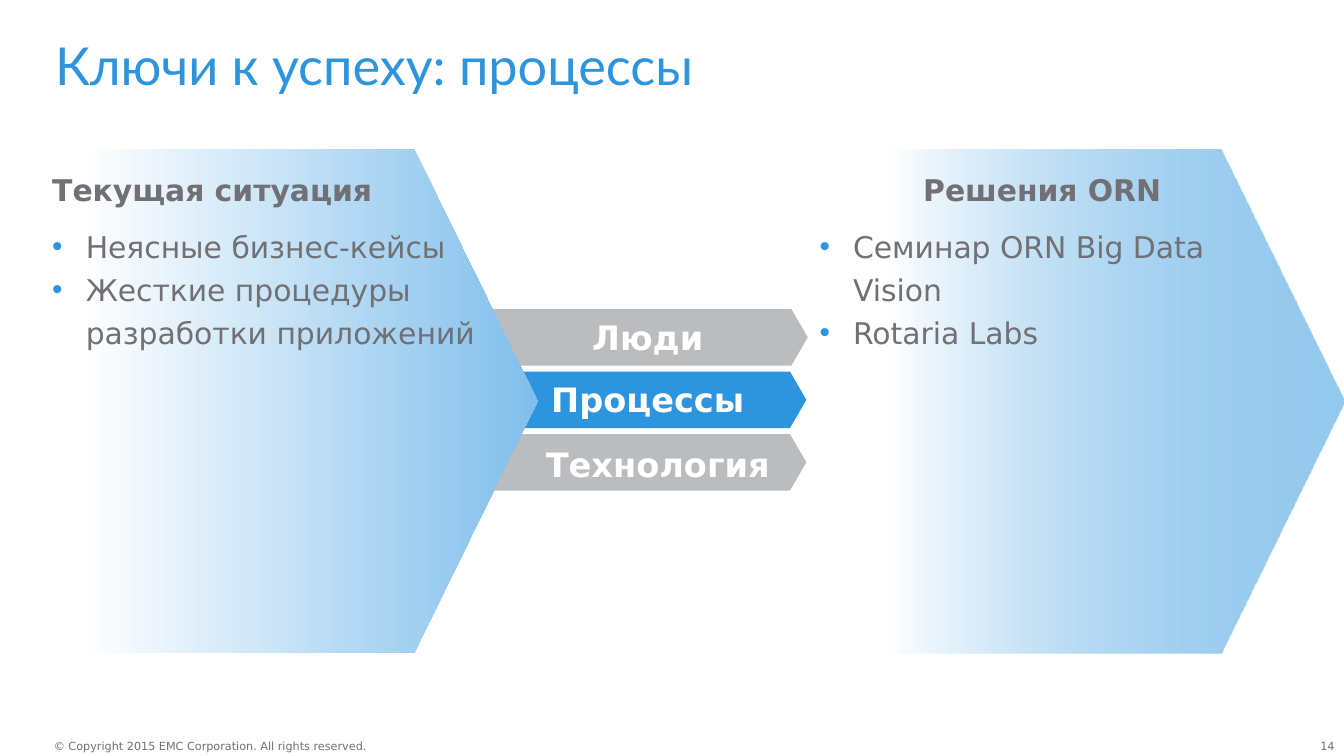
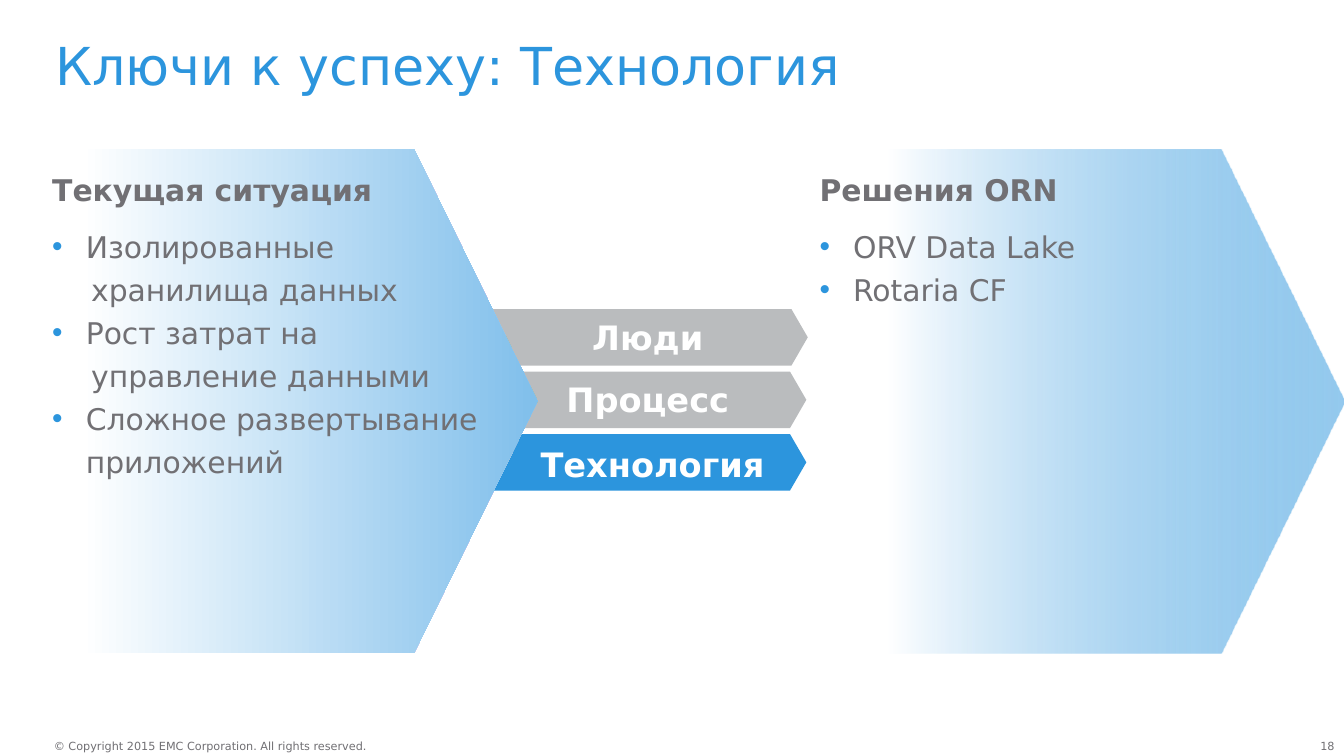
from dataclasses import dataclass

from lxml.etree import SubElement
from pptx import Presentation
from pptx.dml.color import RGBColor
from pptx.enum.shapes import MSO_SHAPE
from pptx.enum.text import MSO_ANCHOR, MSO_AUTO_SIZE, PP_ALIGN
from pptx.oxml.ns import qn
from pptx.util import Inches, Pt


@dataclass(frozen=True)
class Theme:
    blue: str = "2C95DD"
    light_blue: str = "80BFEB"
    gray: str = "BABCBE"
    text: str = "717074"
    white: str = "FFFFFF"
    font: str = "DejaVu Sans"
    title_font: str = "Lato"
    title_size: int = 28
    step_size: int = 18
    body_size: int = 16
    footer_size: int = 6


THEME = Theme()
SLIDE_WIDTH = Inches(10)
SLIDE_HEIGHT = SLIDE_WIDTH * 9 // 16
COPYRIGHT = "© Copyright 2015 EMC Corporation. All rights reserved."
LEFT_HEADING = "Текущая ситуация"
RIGHT_HEADING = "Решения ORN"
STEP_ARROWS = [(3.62, 2.39), (3.63, 2.37), (3.63, 2.37)]
FIRST_STEP_TOP, LAST_STEP_TOP, STEP_HEIGHT = 2.3, 3.23, 0.42
STEP_PITCH = (LAST_STEP_TOP - FIRST_STEP_TOP) / (len(STEP_ARROWS) - 1)
BULLET_INDENT = 0.25
CONTINUED_INDENT = 0.29


@dataclass(frozen=True)
class Line:
    text: str
    bullet: bool = True


@dataclass(frozen=True)
class Content:
    title: str
    number: str
    steps: list  # (text, left, top, width) of each label
    active_step: int
    current: list
    solutions: list
    title_font: str = THEME.font
    solutions_align: PP_ALIGN = PP_ALIGN.LEFT


SLIDES = [
    Content(
        title="Ключи к успеху: процессы",
        number="14",
        steps=[("Люди", 3.92, 2.31, 1.8), ("Процессы", 3.88, 2.77, 1.88),
               ("Технология", 3.88, 3.25, 2.03)],
        active_step=1,
        current=[Line("Неясные бизнес-кейсы"),
                 Line("Жесткие процедуры разработки приложений")],
        solutions=[Line("Семинар ORN Big Data Vision"), Line("Rotaria Labs")],
        title_font=THEME.title_font,
        solutions_align=PP_ALIGN.CENTER,
    ),
    Content(
        title="Ключи к успеху: Технология",
        number="18",
        steps=[("Люди", 3.92, 2.31, 1.8), ("Процесс", 3.88, 2.77, 1.88),
               ("Технология", 3.88, 3.25, 1.95)],
        active_step=2,
        current=[Line("Изолированные"),
                 Line("хранилища данных", bullet=False),
                 Line("Рост затрат на"),
                 Line("управление данными", bullet=False),
                 Line("Сложное развертывание приложений")],
        solutions=[Line("ORV Data Lake"), Line("Rotaria CF")],
    ),
]


def color(value):
    return RGBColor.from_string(value)


def place(shape, left, top, width, height):
    shape.left, shape.top = Inches(left), Inches(top)
    shape.width, shape.height = Inches(width), Inches(height)


def remove_insets(frame):
    frame.margin_left = frame.margin_right = 0
    frame.margin_top = frame.margin_bottom = 0


def add_run(paragraph, text, size, text_color=THEME.text, bold=False, font=THEME.font):
    run = paragraph.add_run()
    run.text = text
    run.font.name = font
    run.font.size = Pt(size)
    run.font.bold = bold
    run.font.color.rgb = color(text_color)


def add_frame(slide, *box):
    """Add a wrapping text box and return its text frame."""
    frame = slide.shapes.add_textbox(*map(Inches, box)).text_frame
    frame.word_wrap = True
    return frame


def add_label(slide, box, text, size, align=PP_ALIGN.LEFT, **style):
    frame = add_frame(slide, *box)
    paragraph = frame.paragraphs[0]
    paragraph.alignment = align
    add_run(paragraph, text, size, **style)
    return frame


def add_title(slide, text, font):
    title = slide.shapes.title
    place(title, 0.41, 0.25, 9.25, 0.5)
    frame = title.text_frame
    remove_insets(frame)
    frame.auto_size = MSO_AUTO_SIZE.NONE
    frame.vertical_anchor = MSO_ANCHOR.TOP
    paragraph = frame.paragraphs[0]
    paragraph.alignment = PP_ALIGN.LEFT
    add_run(paragraph, text, THEME.title_size, THEME.blue, font=font)


def add_footer(slide, number):
    page = add_label(slide, (9.62, 5.5, 0.31, 0.1), number,
                     THEME.footer_size, PP_ALIGN.RIGHT)
    notice = add_label(slide, (0.4, 5.5, 2.42, 0.1), COPYRIGHT, THEME.footer_size)
    notice.word_wrap = False
    for frame in (page, notice):
        remove_insets(frame)


def add_pentagon(slide, box, point):
    """Add a right-pointing pentagon; point is the tip length over its height."""
    shape = slide.shapes.add_shape(MSO_SHAPE.PENTAGON, *map(Inches, box))
    shape.adjustments[0] = point
    shape.shadow.inherit = False
    shape.line.fill.background()
    return shape


def add_panel(slide, left, end_color, opacity=None):
    """Add a large pentagon fading from white to end_color."""
    panel = add_pentagon(slide, (left, 1.11, 4, 3.75), 0.245)
    panel.fill.gradient()
    panel.fill.gradient_angle = 0
    start, end = panel.fill.gradient_stops
    start.position, start.color.rgb = 0.15, color(THEME.white)
    end.position, end.color.rgb = 1, color(end_color)
    if opacity is not None:
        last_color = list(panel.element.iter(qn("a:srgbClr")))[-1]
        SubElement(last_color, qn("a:alpha"), val=str(opacity * 1000))


def add_step_arrows(slide, active_step):
    for index, (left, width) in enumerate(STEP_ARROWS):
        top = FIRST_STEP_TOP + index * STEP_PITCH
        arrow = add_pentagon(slide, (left, top, width, STEP_HEIGHT), 0.289)
        arrow.fill.solid()
        arrow.fill.fore_color.rgb = color(
            THEME.blue if index == active_step else THEME.gray)


def add_step_labels(slide, steps):
    for text, left, top, width in steps:
        frame = add_label(slide, (left, top, width, 0.4), text, THEME.step_size,
                          PP_ALIGN.CENTER, text_color=THEME.white, bold=True)
        frame.vertical_anchor = MSO_ANCHOR.MIDDLE


def set_indent(paragraph, bullet):
    properties = paragraph._p.get_or_add_pPr()
    indent = BULLET_INDENT if bullet else CONTINUED_INDENT
    properties.set("marL", str(Inches(indent)))
    properties.set("indent", str(-Inches(indent) if bullet else 0))
    if bullet:
        bullet_color = SubElement(properties, qn("a:buClr"))
        SubElement(bullet_color, qn("a:srgbClr"), val=THEME.blue)
        SubElement(properties, qn("a:buFont"), typeface="Arial")
        SubElement(properties, qn("a:buChar"), char="•")


def add_list(slide, box, lines):
    frame = add_frame(slide, *box)
    for index, line in enumerate(lines):
        paragraph = frame.add_paragraph() if index else frame.paragraphs[0]
        set_indent(paragraph, line.bullet)
        paragraph.line_spacing = 1.2
        add_run(paragraph, line.text, THEME.body_size)


def add_heading(slide, left, width, text, align=PP_ALIGN.LEFT):
    add_label(slide, (left, 1.23, width, 0.37), text, THEME.body_size, align, bold=True)


def build_slide(presentation, content):
    slide = presentation.slides.add_slide(presentation.slide_layouts[5])
    add_footer(slide, content.number)
    add_title(slide, content.title, content.title_font)
    add_panel(slide, 6, THEME.blue, opacity=50)
    add_step_arrows(slide, content.active_step)
    add_step_labels(slide, content.steps)
    add_panel(slide, 0, THEME.light_blue)
    add_list(slide, (0.29, 1.6, 3.79, 2.71), content.current)
    add_heading(slide, 0.29, 3.25, LEFT_HEADING)
    add_heading(slide, 6, 3.51, RIGHT_HEADING, content.solutions_align)
    add_list(slide, (6, 1.6, 3.76, 2.11), content.solutions)


def main():
    presentation = Presentation()
    presentation.slide_width = SLIDE_WIDTH
    presentation.slide_height = SLIDE_HEIGHT
    for content in SLIDES:
        build_slide(presentation, content)
    presentation.save("out.pptx")


if __name__ == "__main__":
    main()
